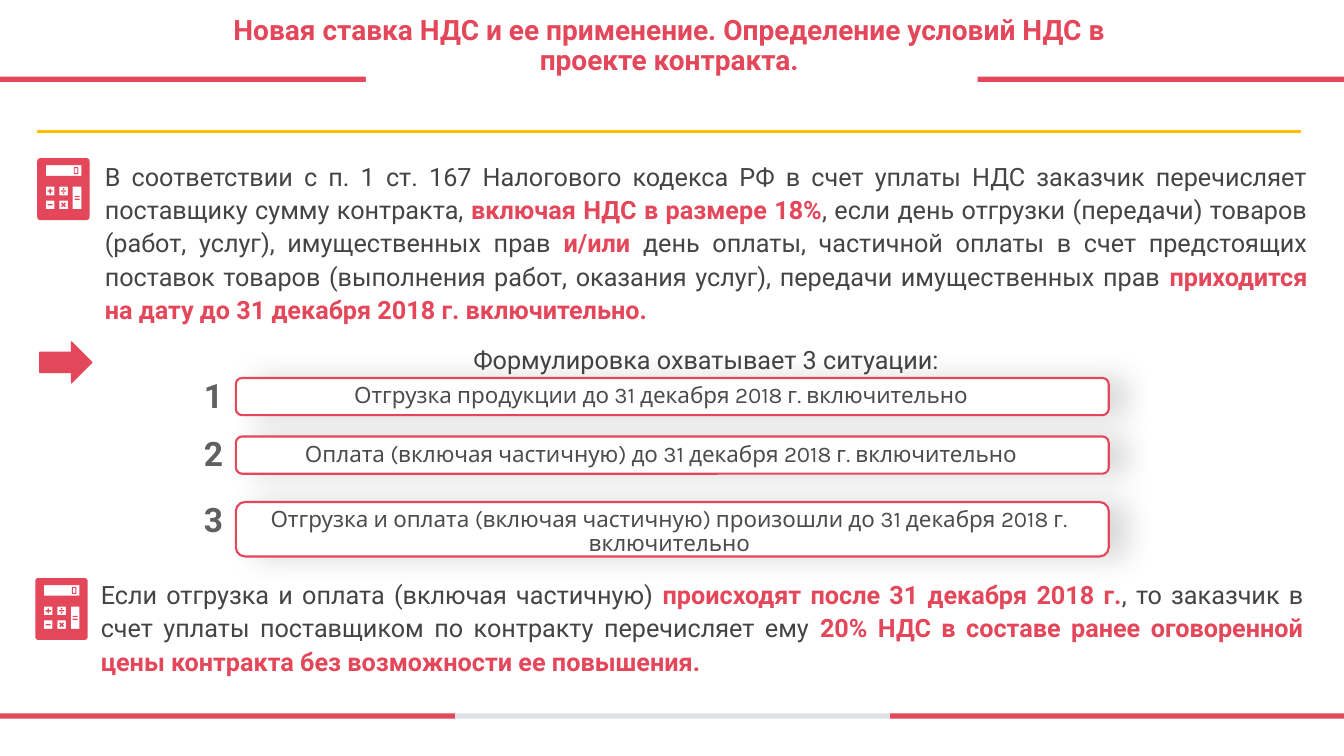
from math import cos, pi, sin

from lxml.etree import SubElement
from pptx import Presentation
from pptx.dml.color import RGBColor
from pptx.enum.shapes import MSO_CONNECTOR, MSO_SHAPE
from pptx.enum.text import MSO_ANCHOR, PP_ALIGN
from pptx.oxml.ns import qn
from pptx.util import Pt

RED, GREY, WHITE, YELLOW = "E4465A", "DBE1E4", "FFFFFF", "FFC000"
BODY, SITUATION, NUMBER = "444444", "4D4C4D", "606060"

TITLE = "Новая ставка НДС и ее применение. Определение условий НДС в проекте контракта."
# Within a paragraph, plain and highlighted runs alternate.
BEFORE_RULE = [
    "В соответствии с п. 1 ст. 167 Налогового кодекса РФ в счет уплаты НДС заказчик "
    "перечисляет поставщику сумму контракта, ",
    "включая НДС в размере 18%",
    ", если день отгрузки (передачи) товаров (работ, услуг), имущественных прав ",
    "и/или ",
    "день оплаты, частичной оплаты в счет предстоящих поставок товаров (выполнения "
    "работ, оказания услуг), передачи имущественных прав ",
    "приходится на дату до 31 декабря 2018 г. включительно.",
]
SITUATIONS_HEADING = ["Формулировка охватывает 3 ситуации:"]
AFTER_RULE = [
    "Если отгрузка и оплата (включая частичную) ",
    "происходят после 31 декабря 2018 г.",
    ", то заказчик в счет уплаты поставщиком по контракту перечисляет ему ",
    "20% НДС в составе ранее оговоренной цены контракта без возможности ее повышения.",
]
# Box top, box height, text left, text
SITUATIONS = [
    (270, 26.6, 159.1, "Отгрузка продукции до 31 декабря 2018 г. включительно"),
    (311.8, 26.6, 159.1, "Оплата (включая частичную) до 31 декабря 2018 г. включительно"),
    (358.6, 38.9, 164.9,
     "Отгрузка и оплата (включая частичную) произошли до 31 декабря 2018 г. включительно"),
]


def color(hex_string):
    return RGBColor.from_string(hex_string)


def paint(shape, fill, line=None, width=0):
    shape.shadow.inherit = False
    shape.fill.solid()
    shape.fill.fore_color.rgb = color(fill)
    if line:
        shape.line.color.rgb = color(line)
        shape.line.width = Pt(width)
    else:
        shape.line.fill.background()
    return shape


def add_preset(shapes, kind, left, top, width, height, fill, line=None, line_width=0):
    shape = shapes.add_shape(kind, Pt(left), Pt(top), Pt(width), Pt(height))
    return paint(shape, fill, line, line_width)


def add_outline(shapes, contours, fill):
    """Draw closed contours as one freeform; inner contours become holes."""
    contours = [[(x * 100, y * 100) for x, y in contour] for contour in contours]
    builder = shapes.build_freeform(*contours[0][0], scale=127)
    for index, contour in enumerate(contours):
        if index:
            builder.move_to(*contour[0])
        builder.add_line_segments(contour[1:], close=True)
    return paint(builder.convert_to_shape(), fill)


def add_text(slide, left, top, width, height, paragraphs, *, size, text_color, font="Roboto",
             bold=False, aligns=(PP_ALIGN.CENTER,), spacing=1.0, after=0,
             inset=True, wrap=True, anchor=MSO_ANCHOR.TOP):
    """Add a text box; each paragraph is a list of runs, every second one highlighted."""
    frame = slide.shapes.add_textbox(Pt(left), Pt(top), Pt(width), Pt(height)).text_frame
    frame.word_wrap = wrap
    frame.vertical_anchor = anchor
    if not inset:
        frame.margin_left = frame.margin_top = frame.margin_right = frame.margin_bottom = 0
    for index, (runs, align) in enumerate(zip(paragraphs, aligns)):
        paragraph = frame.add_paragraph() if index else frame.paragraphs[0]
        paragraph.alignment = align
        paragraph.line_spacing = spacing
        paragraph.space_after = Pt(after)
        for position, text in enumerate(runs):
            highlighted = position % 2 == 1
            run = paragraph.add_run()
            run.text = text
            run.font.name = font
            run.font.size = Pt(size)
            run.font.bold = bold or highlighted
            run.font.color.rgb = color(RED if highlighted else text_color)


def add_soft_shadow(shape):
    effects = shape._element.spPr.find(qn("a:effectLst"))
    shadow = SubElement(effects, qn("a:outerShdw"), blurRad=str(Pt(20)), dist=str(Pt(12)),
                        dir="0", algn="l", rotWithShape="0")
    black = SubElement(shadow, qn("a:srgbClr"), val="000000")
    SubElement(black, qn("a:alpha"), val="14000")


def add_rule(slide, left, right, top):
    rule = slide.shapes.add_connector(MSO_CONNECTOR.STRAIGHT, Pt(left), Pt(top), Pt(right), Pt(top))
    rule.line.color.rgb = color(YELLOW)
    rule.line.width = Pt(2.25)
    SubElement(rule._element.spPr, qn("a:effectLst"))


def box(left, top, width, height):
    return [(left, top), (left + width, top), (left + width, top + height), (left, top + height)]


def rounded_box(left, top, width, height, radius, steps=5):
    points = []
    for quarter, (x, y) in enumerate(box(left + radius, top + radius,
                                         width - 2 * radius, height - 2 * radius)):
        for step in range(steps + 1):
            angle = pi + (quarter + step / steps) * pi / 2
            points.append((x + radius * cos(angle), y + radius * sin(angle)))
    return points


def cross(center_x, center_y, arm, half, angle=0):
    corners = [(-half, -arm), (half, -arm), (half, -half), (arm, -half), (arm, half), (half, half),
               (half, arm), (-half, arm), (-half, half), (-arm, half), (-arm, -half), (-half, -half)]
    return [(center_x + x * cos(angle) - y * sin(angle),
             center_y + x * sin(angle) + y * cos(angle)) for x, y in corners]


def add_calculator(slide, left, top):
    shapes = slide.shapes.add_group_shape().shapes
    key = 6.1
    columns = [left + 6.2 + 9.6 * index for index in range(3)]
    rows = [top + 20.4, top + 30.3]
    keys = [box(x, y, key, key) for x in columns[:2] for y in rows]
    equals_key = box(columns[2], rows[0], key, rows[1] - rows[0] + key)
    display = box(columns[0], top + 5, 25.3, 7.6)
    add_outline(shapes, [rounded_box(left, top, 37.4, 44.2, 2.2), *keys, equals_key, display], RED)
    add_outline(shapes, [rounded_box(left + 26.1, top + 6.4, 3.2, 5, 0.6),
                         box(left + 26.8, top + 7.1, 1.8, 3.6)], RED)

    first, second, third = [x + key / 2 for x in columns]
    upper, lower = [y + key / 2 for y in rows]
    add_outline(shapes, [cross(first, upper, 1.8, 0.5)], RED)
    add_outline(shapes, [cross(second, lower, 1.9, 0.5, pi / 4)], RED)
    middle = (upper + lower) / 2
    for x, y in [(first, lower), (second, upper), (third, middle - 1), (third, middle + 1)]:
        add_preset(shapes, MSO_SHAPE.RECTANGLE, x - 1.8, y - 0.45, 3.6, 0.9, RED)
    for offset in (-1.5, 1.5):
        add_preset(shapes, MSO_SHAPE.OVAL, second - 0.6, upper + offset - 0.6, 1.2, 1.2, RED)


def add_situation(slide, number, top, height, text_left, text):
    frame = add_preset(slide.shapes, MSO_SHAPE.ROUNDED_RECTANGLE, 168.5, top, 623.5, height,
                       WHITE, RED, 1.5)
    add_soft_shadow(frame)
    add_text(slide, 138.5, top - 6, 28.8, 36, [[str(number)]], size=24, text_color=NUMBER,
             bold=True, aligns=[PP_ALIGN.LEFT], wrap=False)
    add_text(slide, text_left, top + 4.5, 626.4, height - 3.6, [[text]], size=16,
             text_color=SITUATION, font="Karla", spacing=0.9, inset=False)


def main():
    presentation = Presentation()
    presentation.slide_width, presentation.slide_height = Pt(960), Pt(540)
    slide = presentation.slides.add_slide(presentation.slide_layouts[6])

    for left, top, width, fill in [(0, 54.7, 325.2, RED), (635.6, 54.7, 324.4, RED),
                                   (0, 509.6, 325.2, RED), (635.6, 509.6, 324.4, RED),
                                   (325.2, 509.6, 310.4, GREY)]:
        add_preset(slide.shapes, MSO_SHAPE.RECTANGLE, left, top, width, 3.8, fill)
    add_rule(slide, 26.6, 929.5, 94.1)
    add_preset(slide.shapes, MSO_SHAPE.RECTANGLE, 261.4, 49.7, 437, 15.1, WHITE)
    add_text(slide, 146.2, 9.5, 663.8, 47.5, [[TITLE]], size=20, text_color=RED, bold=True,
             spacing=0.9, anchor=MSO_ANCHOR.MIDDLE)

    add_text(slide, 74.9, 113, 859, 160.6, [BEFORE_RULE, SITUATIONS_HEADING], size=18,
             text_color=BODY, aligns=[PP_ALIGN.JUSTIFY, PP_ALIGN.CENTER], spacing=1.1,
             after=12, inset=False)
    add_calculator(slide, 26.6, 113)
    add_preset(slide.shapes, MSO_SHAPE.RIGHT_ARROW, 28.4, 244.1, 37.4, 29.5, RED, RED, 0.75)
    for number, situation in enumerate(SITUATIONS, start=1):
        add_situation(slide, number, *situation)

    add_text(slide, 72, 411.8, 859, 90.7, [AFTER_RULE], size=18, text_color=BODY,
             aligns=[PP_ALIGN.JUSTIFY], spacing=1.1, after=12, inset=False)
    add_calculator(slide, 25.2, 412.9)
    presentation.save("out.pptx")


if __name__ == "__main__":
    main()
